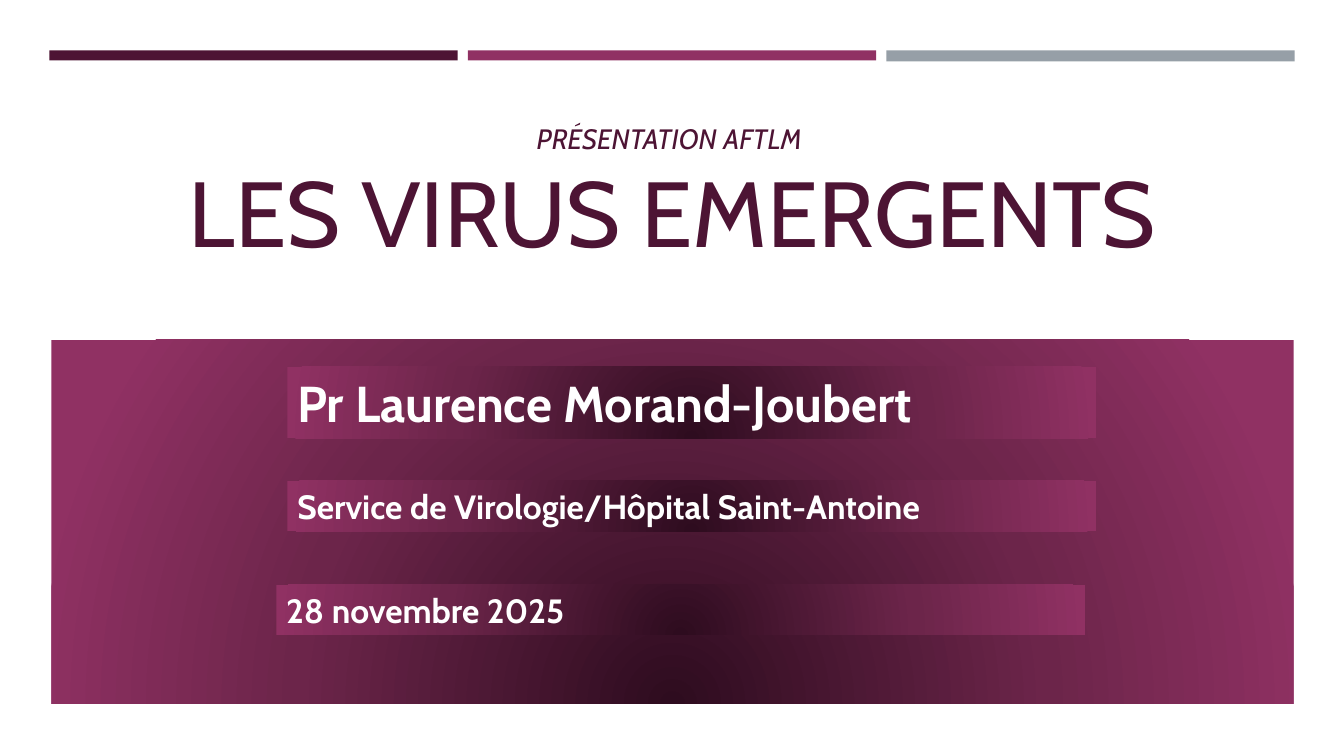
import pptx
import pptx.util
import pptx.dml.color
import pptx.enum.shapes
import pptx.enum.text
import pptx.oxml
import pptx.oxml.ns

Inches = pptx.util.Inches
Pt = pptx.util.Pt
PLUM, ROSE, GREY, WHITE = "4D1434", "903163", "969FA7", "FFFFFF"
STOPS = [(0, "2E0C1F"), (58, "6C254A"), (100, ROSE)]


def color(code):
    return pptx.dml.color.RGBColor.from_string(code)


def block(box, code=None):
    shape = slide.shapes.add_shape(
        pptx.enum.shapes.MSO_SHAPE.RECTANGLE, *map(Inches, box))
    shape.shadow.inherit = False
    shape.line.fill.background()
    if code:
        shape.fill.solid()
        shape.fill.fore_color.rgb = color(code)
    else:
        stops = "".join(
            f'<a:gs pos="{pos * 1000}"><a:srgbClr val="{tone}"/></a:gs>'
            for pos, tone in STOPS)
        grad = pptx.oxml.parse_xml(
            f'<a:gradFill {pptx.oxml.ns.nsdecls("a")} rotWithShape="1">'
            f'<a:gsLst>{stops}</a:gsLst><a:path path="circle">'
            '<a:fillToRect l="50000" t="130000" r="50000" b="-30000"/>'
            '</a:path></a:gradFill>')
        shape._element.spPr.insert(2, grad)
    return shape


deck = pptx.Presentation()
deck.slide_width = Inches(13.33)
deck.slide_height = Inches(7.5)
slide = deck.slides.add_slide(deck.slide_layouts[0])
sub = slide.placeholders[1]._element
sub.getparent().remove(sub)

for i, code in enumerate([PLUM, ROSE, GREY]):
    block((0.49 + 4.15 * i, 0.5, 4.05, 0.11 if code == GREY else 0.1), code)
block((0.51, 3.37, 12.32, 3.61))

title = slide.shapes.title
place = {"left": 0.66, "top": 1.12, "width": 12.02, "height": 1.61}
for key, value in place.items():
    setattr(title, key, Inches(value))
frame = title.text_frame
frame.word_wrap = True
frame.auto_size = pptx.enum.text.MSO_AUTO_SIZE.NONE
frame.vertical_anchor = pptx.enum.text.MSO_ANCHOR.MIDDLE
para = frame.paragraphs[0]
para.alignment = pptx.enum.text.PP_ALIGN.CENTER
heads = [("PRÉSENTATION AFTLM ", 20, True), ("LES VIRUS EMERGENTS", 66, False)]
for i, (text, size, slant) in enumerate(heads):
    if i:
        para.add_line_break()
    run = para.add_run()
    run.text = text
    style = {"name": "Cabin", "size": Pt(size), "italic": slant}
    for key, value in style.items():
        setattr(run.font, key, value)
    run.font.color.rgb = color(PLUM)

lines = [
    ("Pr Laurence Morand-Joubert", 36, 2.85, 3.64, 0.71),
    ("Service de Virologie/Hôpital Saint-Antoine", 24, 2.85, 4.77, 0.5),
    ("28 novembre 2025", 24, 2.74, 5.8, 0.5),
]
for text, size, left, top, height in lines:
    frame = block((left, top, 8.02, height)).text_frame
    frame.word_wrap = True
    frame.auto_size = pptx.enum.text.MSO_AUTO_SIZE.SHAPE_TO_FIT_TEXT
    frame.vertical_anchor = pptx.enum.text.MSO_ANCHOR.TOP
    para = frame.paragraphs[0]
    para.alignment = pptx.enum.text.PP_ALIGN.LEFT
    run = para.add_run()
    run.text = text
    style = {"name": "Cabin", "size": Pt(size), "bold": True}
    for key, value in style.items():
        setattr(run.font, key, value)
    run.font.color.rgb = color(WHITE)

deck.save("out.pptx")
